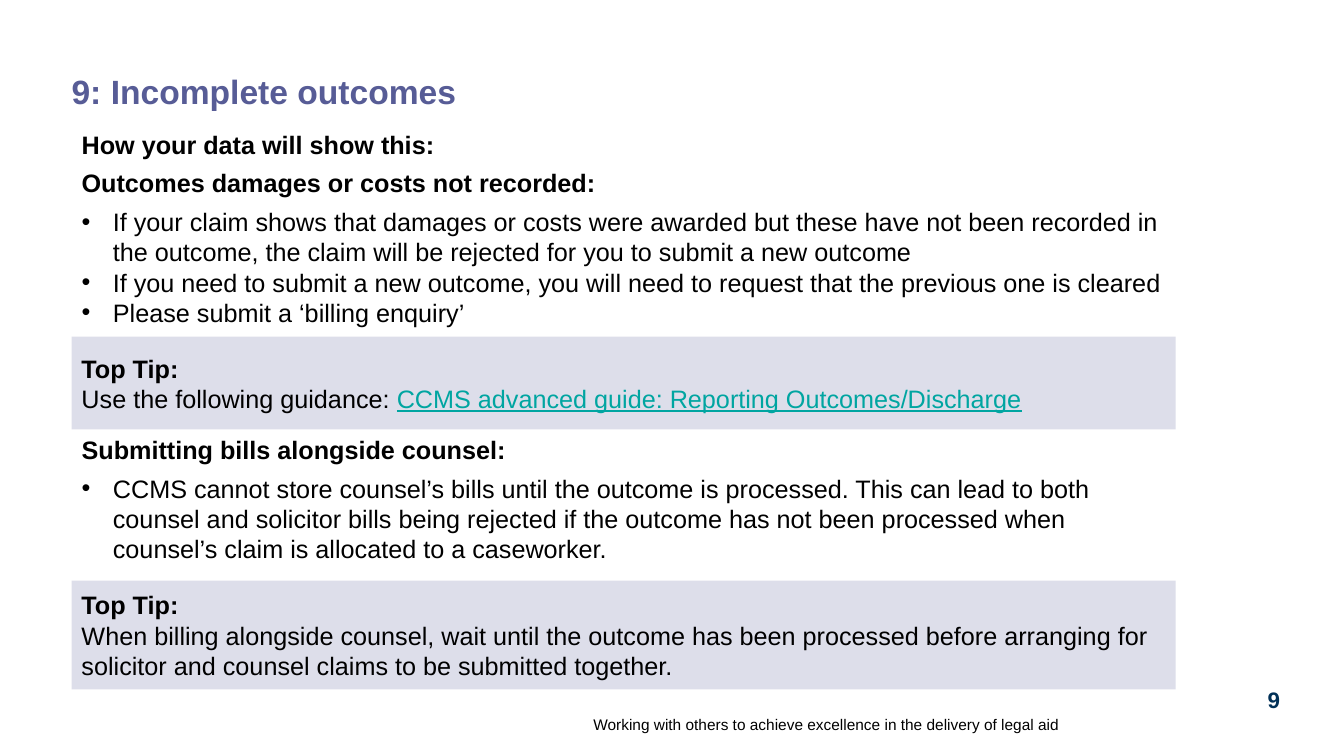
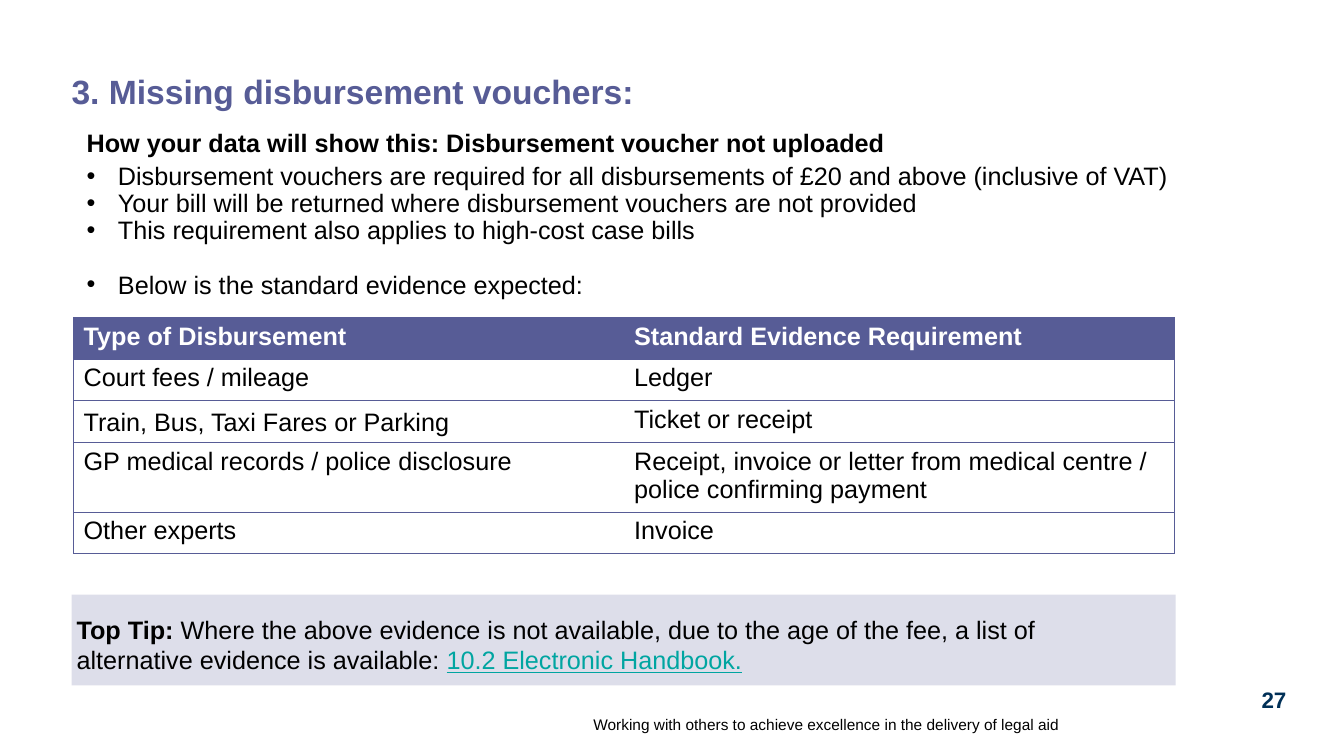
"""Build two guidance slides on incomplete outcomes and missing disbursement vouchers."""
from lxml import etree
from pptx import Presentation, util as u
from pptx.dml.color import RGBColor
from pptx.enum import shapes, text
from pptx.oxml import ns

PURPLE = RGBColor(0x57, 0x5C, 0x96)
LILAC = RGBColor(0xDD, 0xDE, 0xEA)
TEAL = RGBColor(0x00, 0xA5, 0xA1)
NAVY = RGBColor(0x00, 0x30, 0x57)
BLACK = RGBColor(0, 0, 0)
WHITE = RGBColor(0xFF, 0xFF, 0xFF)

FONT = "Arial"
LEFT, WIDTH = 0.71, 10.95
LINE = 21.6
FOOTER = "Working with others to achieve excellence in the delivery of legal aid"

BOLD = {"bold": True}
LINK = {"color": TEAL, "underline": True}
HEADING = {"bold": True, "after": 6}
BULLET = {"bullet": True}
TIGHT = {"bullet": True, "start": 0.03, "line": 19.4}

OUTCOMES = {
    "title": "9: Incomplete outcomes",
    "number": "9",
    "body_at": (LEFT, 1.23, WIDTH, 4.44),
    "body": [
        ("How your data will show this:", HEADING),
        ("Outcomes damages or costs not recorded:", HEADING),
        ("If your claim shows that damages or costs were awarded but these have not been "
         "recorded in the outcome, the claim will be rejected for you to submit a new outcome", BULLET),
        ("If you need to submit a new outcome, you will need to request that the previous one "
         "is cleared", BULLET),
        ("Please submit a ‘billing enquiry’", BULLET),
        ("Submitting bills alongside counsel:", {**HEADING, "before": 76.5}),
        ("CCMS cannot store counsel’s bills until the outcome is processed. This can lead to both "
         "counsel and solicitor bills being rejected if the outcome has not been processed when "
         "counsel’s claim is allocated to a caseworker.", BULLET),
    ],
    "tips": [
        {"top": 3.34, "height": 0.92, "paras": [
            ("Top Tip:", BOLD),
            ([("Use the following guidance: ", {}),
              ("CCMS advanced guide: Reporting Outcomes/Discharge", LINK)], {}),
        ]},
        {"top": 5.76, "height": 1.08, "paras": [
            ("Top Tip:", BOLD),
            ("When billing alongside counsel, wait until the outcome has been processed before "
             "arranging for solicitor and counsel claims to be submitted together.", {}),
        ]},
    ],
}

VOUCHERS = {
    "title": "3. Missing disbursement vouchers:",
    "number": "27",
    "body_at": (0.73, 1.21, 11.09, 1.74),
    "body": [
        ("How your data will show this: Disbursement voucher not uploaded",
         {"bold": True, "start": 0.03}),
        ("Disbursement vouchers are required for all disbursements of £20 and above "
         "(inclusive of VAT)", {**TIGHT, "before": 4.4}),
        ("Your bill will be returned where disbursement vouchers are not provided", TIGHT),
        ("This requirement also applies to high-cost case bills", TIGHT),
        ("Below is the standard evidence expected:", {**TIGHT, "before": 19.5}),
    ],
    "tips": [
        {"top": 5.9, "height": 0.9, "insets": (0.05, 0.08, 0.3, 0), "paras": [
            ([("Top Tip: ", BOLD),
              ("Where the above evidence is not available, due to the age of the fee, a list of "
               "alternative evidence is available: ", {}),
              ("10.2 Electronic Handbook.", LINK)], {"line": 22}),
        ]},
    ],
}

EVIDENCE = [
    ("Type of Disbursement", "Standard Evidence Requirement"),
    ("Court fees / mileage", "Ledger"),
    ("Train, Bus, Taxi Fares or Parking", "Ticket or receipt"),
    ("GP medical records / police disclosure",
     "Receipt, invoice or letter from medical centre / police confirming payment"),
    ("Other experts", "Invoice"),
]
ROW_HEIGHTS = (0.41, 0.41, 0.41, 0.69, 0.41)


def inches(values):
    return [u.Inches(value) for value in values]


def write(para, content, size=18, color=BLACK, bold=False, bullet=False, start=0,
          before=0, after=0, line=LINE, align=text.PP_ALIGN.LEFT):
    """Fill a paragraph with one string or a list of (text, style) spans."""
    props = para._p.get_or_add_pPr()
    hang = 0.31 if bullet else 0
    props.set("marL", str(u.Inches(start + hang)))
    props.set("indent", str(-u.Inches(hang)))
    if bullet:
        etree.SubElement(props, ns.qn("a:buChar")).set("char", "•")
    else:
        etree.SubElement(props, ns.qn("a:buNone"))
    para.alignment = align
    para.space_before, para.space_after = u.Pt(before), u.Pt(after)
    para.line_spacing = u.Pt(line) if line > 3 else line
    spans = [(content, {})] if isinstance(content, str) else content
    for words, style in spans:
        span = para.add_run()
        span.text = words
        span.font.name, span.font.size = FONT, u.Pt(size)
        span.font.bold = style.get("bold", bold)
        span.font.underline = style.get("underline", False)
        span.font.color.rgb = style.get("color", color)


def fill_frame(frame, paras, insets=(0.1, 0.05, 0.1, 0.05), anchor=text.MSO_ANCHOR.TOP):
    frame.word_wrap = True
    frame.auto_size = text.MSO_AUTO_SIZE.NONE
    frame.vertical_anchor = anchor
    (frame.margin_left, frame.margin_top,
     frame.margin_right, frame.margin_bottom) = inches(insets)
    for index, (content, style) in enumerate(paras):
        para = frame.add_paragraph() if index else frame.paragraphs[0]
        write(para, content, **style)


def place(shape, at):
    shape.left, shape.top, shape.width, shape.height = inches(at)


def add_label(slide, at, words, anchor=text.MSO_ANCHOR.TOP, **style):
    box = slide.shapes.add_textbox(*inches(at))
    fill_frame(box.text_frame, [(words, {"line": 1.0, **style})], (0, 0, 0, 0), anchor)


def add_tip(slide, top, height, paras, insets=(0.1, 0.05, 0.1, 0.05)):
    panel = slide.shapes.add_shape(shapes.MSO_SHAPE.RECTANGLE,
                                   *inches((LEFT, top, WIDTH, height)))
    panel.shadow.inherit = False
    panel.fill.solid()
    panel.fill.fore_color.rgb = LILAC
    panel.line.fill.background()
    fill_frame(panel.text_frame, paras, insets, text.MSO_ANCHOR.MIDDLE)


def add_border(cell, side, visible):
    edge = etree.SubElement(cell._tc.get_or_add_tcPr(), ns.qn(f"a:ln{side}"))
    edge.set("w", str(u.Pt(0.5)))
    if visible:
        paint = etree.SubElement(edge, ns.qn("a:solidFill"))
        etree.SubElement(paint, ns.qn("a:srgbClr")).set("val", str(PURPLE))
    else:
        etree.SubElement(edge, ns.qn("a:noFill"))


def add_evidence_table(slide):
    table = slide.shapes.add_table(len(EVIDENCE), 2, *inches(
        (0.73, 3.15, 10.92, sum(ROW_HEIGHTS)))).table
    table.horz_banding = False
    for row_index, (row, height) in enumerate(zip(EVIDENCE, ROW_HEIGHTS)):
        table.rows[row_index].height = u.Inches(height)
        header = row_index == 0
        for column, words in enumerate(row):
            cell = table.cell(row_index, column)
            for side in "LRTB":
                inner = side == "LR"[1 - column]
                add_border(cell, side, not inner)
            cell.fill.solid()
            cell.fill.fore_color.rgb = PURPLE if header else WHITE
            raised = (row_index, column) == (2, 0)
            write(cell.text_frame.paragraphs[0], words, bold=header,
                  color=WHITE if header else BLACK, line=22.9 if raised else 1.0)


def add_page(deck, content):
    slide = deck.slides.add_slide(deck.slide_layouts[1])
    title, body = slide.shapes.title, slide.placeholders[1]
    place(title, (LEFT, 0.74, 12.04, 0.38))
    fill_frame(title.text_frame,
               [(content["title"], {"size": 24, "color": PURPLE, "bold": True, "line": 0.9})],
               (0, 0, 0, 0), text.MSO_ANCHOR.MIDDLE)
    place(body, content["body_at"])
    fill_frame(body.text_frame, content["body"])
    for tip in content["tips"]:
        add_tip(slide, **tip)
    add_label(slide, (0.57, 6.92, 9.94, 0.36), FOOTER, text.MSO_ANCHOR.BOTTOM,
              size=11, align=text.PP_ALIGN.RIGHT)
    add_label(slide, (12.44, 6.81, 0.39, 0.28), content["number"],
              size=16, color=NAVY, bold=True, align=text.PP_ALIGN.CENTER)
    return slide


def main():
    deck = Presentation()
    deck.slide_width, deck.slide_height = inches((13.33, 7.5))
    add_page(deck, OUTCOMES)
    add_evidence_table(add_page(deck, VOUCHERS))
    deck.save("out.pptx")


if __name__ == "__main__":
    main()
